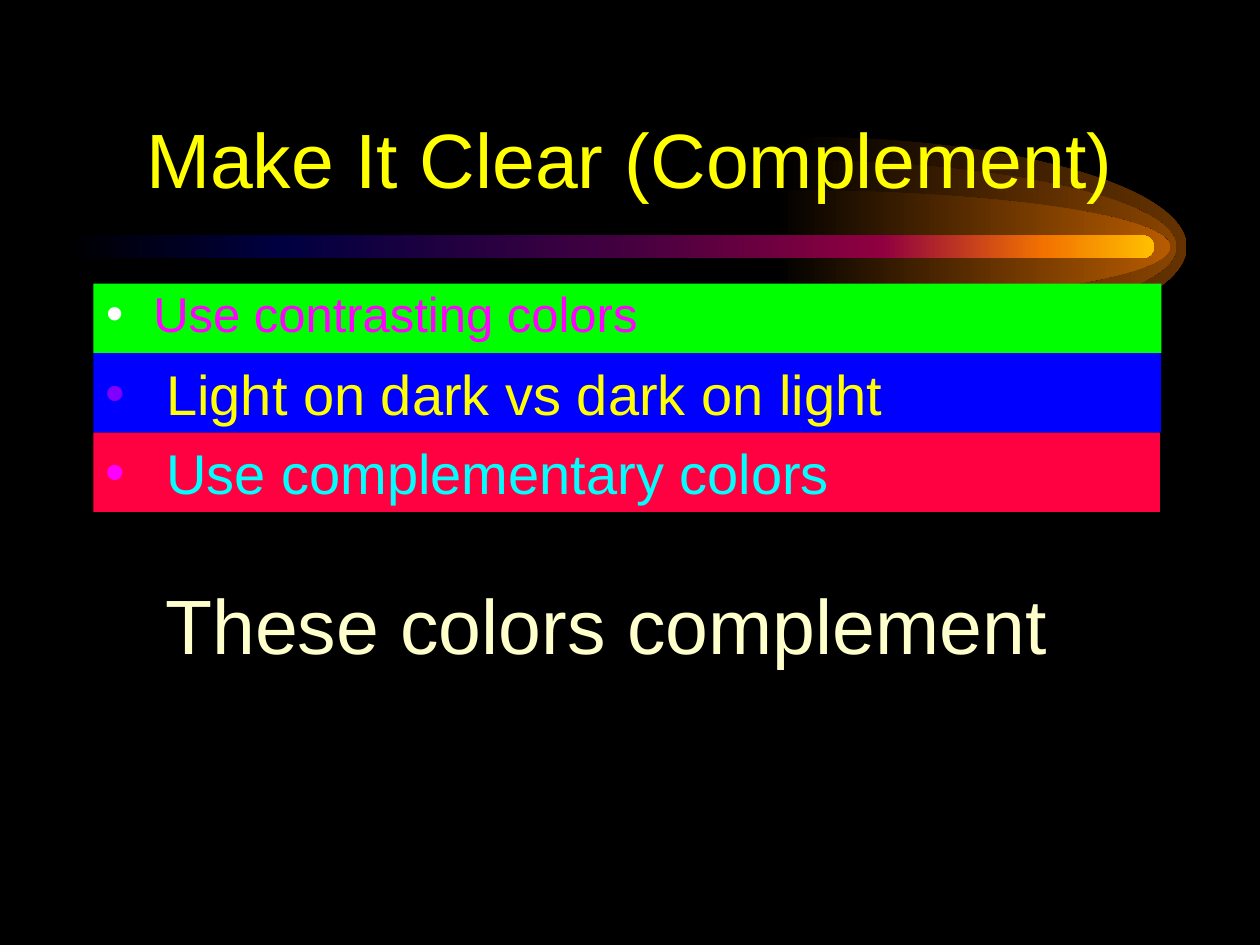
from lxml.etree import SubElement
from pptx import Presentation
from pptx.dml.color import RGBColor
from pptx.enum.shapes import MSO_SHAPE as Shape
from pptx.enum.text import MSO_ANCHOR as Anchor, MSO_AUTO_SIZE as AutoSize, PP_ALIGN as Align
from pptx.oxml.ns import qn
from pptx.util import Pt

COLORS = {
    "black": "000000", "yellow": "FFFF00", "green": "00FF00", "blue": "0000FF",
    "red": "FF0040", "magenta": "FF00FF", "violet": "7F00FF", "cyan": "00FFFF",
    "white": "FFFFFF", "cream": "FFFFCC", "navy": "000040", "plum": "400040",
    "crimson": "8F0040", "orange": "F27300", "gold": "FFBF00",
    "outer": "663300", "middle": "894400", "inner": "B75B00",
}
TITLE = "Make It Clear (Complement)"
CLOSING = "These colors complement"
ROWS = [
    dict(text="Use contrasting colors", fill="green", color="magenta", bullet="white",
         size=28, indent=27, spacing=0.9, top=162, width=610.3, height=40),
    dict(text="Light on dark vs dark on light", fill="blue", color="yellow", bullet="violet",
         size=32, indent=34.5, spacing=1, top=201.8, width=610, height=45.4),
    dict(text="Use complementary colors", fill="red", color="cyan", bullet="magenta",
         size=32, indent=34.5, spacing=1, top=247.2, width=609.5, height=45.4),
]
ROW_LEFT = 53.4
GLOWS = [(452.6, 63, "outer"), (446.8, 49.8, "middle"), (443.2, 32.6, "inner")]
GLOW_WIDTH = 225.4
AXIS = 141.1
ROUND = 0.55
STREAK = [(0, "black"), (20, "navy"), (50, "plum"), (75, "crimson"), (90, "orange"), (100, "gold")]


def rgb(name):
    return RGBColor.from_string(COLORS[name])


def place(shape, left, top, width, height):
    shape.left, shape.top, shape.width, shape.height = map(Pt, (left, top, width, height))


def paint_gradient(shape, stops):
    shape.shadow.inherit = False
    shape.line.fill.background()
    shape.fill.gradient()
    shape.fill.gradient_angle = 0
    stop_list = shape.element.spPr.find(qn("a:gradFill")).find(qn("a:gsLst"))
    for stop in list(stop_list):
        stop_list.remove(stop)
    for percent, name in stops:
        stop = SubElement(stop_list, qn("a:gs"), pos=str(percent * 1000))
        SubElement(stop, qn("a:srgbClr"), val=COLORS[name])


def curve_lines(shape):
    lines = list(shape.element.iter(qn("a:lnTo")))
    for start in range(0, len(lines), 3):
        first, *others = lines[start:start + 3]
        curve = first.makeelement(qn("a:cubicBezTo"))
        first.addprevious(curve)
        for line in (first, *others):
            curve.append(line[0])
            line.getparent().remove(line)


def add_glow(page, center, radius, color):
    outline = [(0, -1), (ROUND, -1), (1, -ROUND), (1, 0), (1, ROUND), (ROUND, 1), (0, 1)]
    points = [(Pt(center + GLOW_WIDTH * x), Pt(AXIS + radius * y)) for x, y in outline]
    builder = page.shapes.build_freeform(*points[0])
    builder.add_line_segments(points[1:], close=True)
    glow = builder.convert_to_shape()
    curve_lines(glow)
    paint_gradient(glow, [(0, "black"), (100, color)])


def write(shape, text, size, color, align=Align.LEFT, anchor=Anchor.TOP,
          wrap=True, spacing=1, bullet=None, indent=0):
    frame = shape.text_frame
    frame.auto_size = AutoSize.NONE
    frame.word_wrap = wrap
    frame.vertical_anchor = anchor
    para = frame.paragraphs[0]
    para.alignment = align
    para.line_spacing = spacing
    span = para.add_run()
    span.text = text
    span.font.name = "Arial"
    span.font.size = Pt(size)
    span.font.color.rgb = rgb(color)
    if bullet:
        props = para._p.get_or_add_pPr()
        props.set("marL", str(Pt(indent)))
        props.set("indent", str(-Pt(indent)))
        SubElement(SubElement(props, qn("a:buClr")), qn("a:srgbClr"), val=COLORS[bullet])
        SubElement(props, qn("a:buFont"), typeface="Arial")
        SubElement(props, qn("a:buChar"), char="•")


def main():
    deck = Presentation()
    deck.slide_width, deck.slide_height = Pt(720), Pt(540)
    page = deck.slides.add_slide(deck.slide_layouts[1])
    page.background.fill.solid()
    page.background.fill.fore_color.rgb = rgb("black")
    title, body = page.placeholders

    for center, radius, color in GLOWS:
        add_glow(page, center, radius, color)
    streak = page.shapes.add_shape(Shape.ROUNDED_RECTANGLE, Pt(36), Pt(134.5), Pt(623.5), Pt(13))
    streak.adjustments[0] = 0.5
    paint_gradient(streak, STREAK)

    for holder in (title, body):
        holder.element.getparent().append(holder.element)
    place(title, 54, 30, 612, 90)
    write(title, TITLE, 44, "yellow", align=Align.CENTER, anchor=Anchor.BOTTOM)

    for number, row in enumerate(ROWS):
        box = page.shapes.add_textbox(0, 0, 0, 0) if number else body
        place(box, ROW_LEFT, row["top"], row["width"], row["height"])
        box.fill.solid()
        box.fill.fore_color.rgb = rgb(row["fill"])
        write(box, row["text"], row["size"], row["color"], spacing=row["spacing"],
              bullet=row["bullet"], indent=row["indent"])

    closing = page.shapes.add_textbox(Pt(87.4), Pt(326.2), Pt(543), Pt(59.8))
    write(closing, CLOSING, 44, "cream", wrap=False)
    deck.save("out.pptx")


if __name__ == "__main__":
    main()
